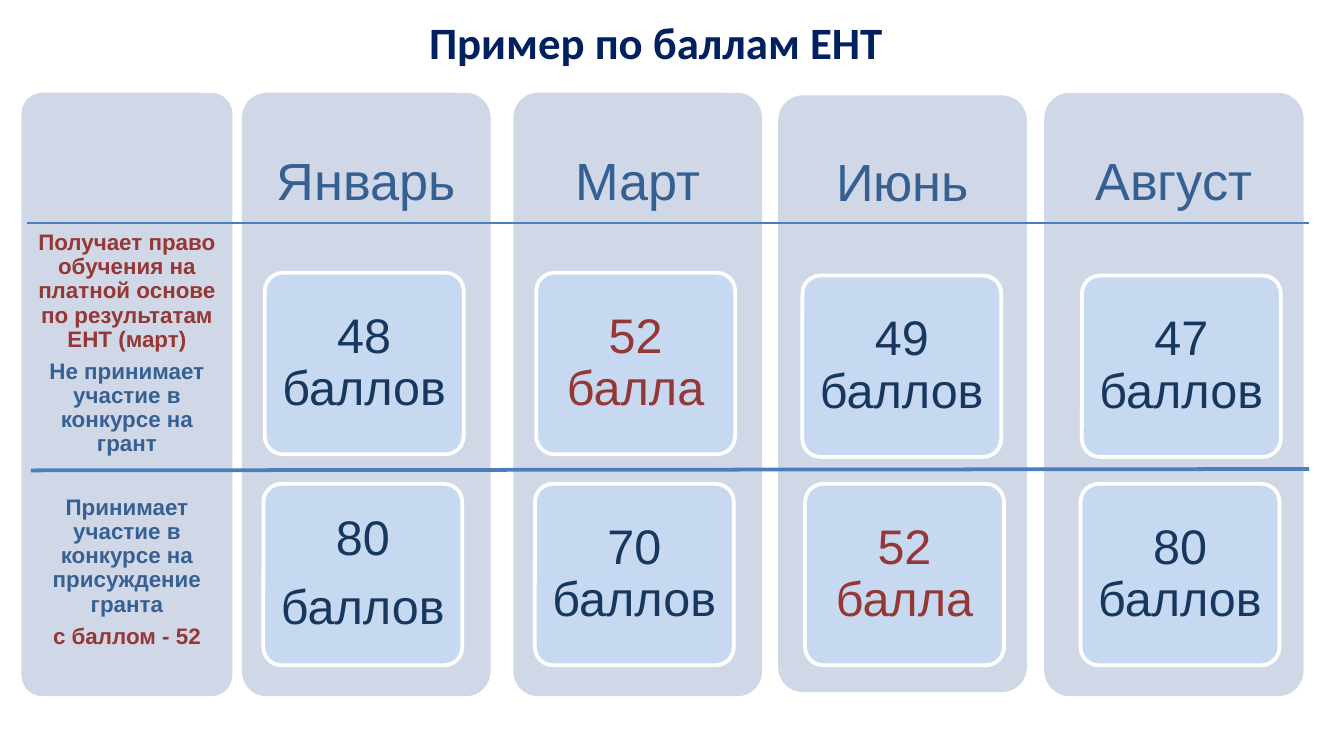
from dataclasses import dataclass

from lxml import etree
from pptx import Presentation
from pptx import util as u
from pptx.dml.color import RGBColor
from pptx.enum import shapes, text
from pptx.oxml.ns import qn

COLORS = {
    "panel": "D0D8E8",
    "card": "C6D9F1",
    "border": "FFFFFF",
    "rule": "4B7EBC",
    "title": "002060",
    "heading": "376092",
    "score": "17375E",
    "accent": "953735",
}
CARD_WIDTH, CARD_HEIGHT = 1.48, 1.35
HEADING_SHARE = 0.3
LOWER_ROW_TOP = 3.6


@dataclass
class Box:
    left: float
    top: float
    width: float
    height: float

    def lengths(self):
        return [u.Inches(n) for n in (self.left, self.top, self.width, self.height)]


@dataclass
class Card:
    left: float
    top: float
    lines: list[str]
    color: str = "score"


@dataclass
class Month:
    name: str
    panel: Box
    cards: list[Card]


MONTHS = [
    Month("Январь", Box(1.8, 0.69, 1.85, 4.49), [
        Card(1.97, 2.03, ["48 баллов"]),
        Card(1.96, LOWER_ROW_TOP, ["80", "баллов"]),
    ]),
    Month("Март", Box(3.82, 0.69, 1.85, 4.49), [
        Card(3.99, 2.03, ["52 балла"], "accent"),
        Card(3.98, LOWER_ROW_TOP, ["70 баллов"]),
    ]),
    Month("Июнь", Box(5.79, 0.71, 1.85, 4.44), [
        Card(5.97, 2.05, ["49 баллов"]),
        Card(5.99, LOWER_ROW_TOP, ["52 балла"], "accent"),
    ]),
    Month("Август", Box(7.77, 0.69, 1.93, 4.49), [
        Card(8.05, 2.05, ["47 баллов"]),
        Card(8.04, LOWER_ROW_TOP, ["80 баллов"]),
    ]),
]
CRITERIA_PANEL = Box(0.16, 0.69, 1.57, 4.49)
CRITERIA = [
    (Box(0.16, 1.72, 1.57, 1.7), [
        ("Получает право обучения на платной основе по результатам ЕНТ (март)", "accent"),
        ("Не принимает участие в конкурсе на грант", "heading"),
    ]),
    (Box(0.16, 3.69, 1.57, 1.25), [
        ("Принимает участие в конкурсе на присуждение гранта", "heading"),
        ("с баллом - 52", "accent"),
    ]),
]


def rgb(name: str) -> RGBColor:
    return RGBColor.from_string(COLORS[name])


def write(shape, lines: list[tuple[str, str]], *, size: float, font: str = "Arial",
          bold: bool = False, spacing: float = 0.9, inset_x: float = 0.05,
          inset_y: float = 0.05, anchor=text.MSO_ANCHOR.MIDDLE) -> None:
    """Fill a shape with centred paragraphs given as (wording, colour name)."""
    frame = shape.text_frame
    frame.word_wrap = True
    frame.vertical_anchor = anchor
    frame.margin_left = frame.margin_right = u.Inches(inset_x)
    frame.margin_top = frame.margin_bottom = u.Inches(inset_y)
    for index, (wording, color) in enumerate(lines):
        paragraph = frame.add_paragraph() if index else frame.paragraphs[0]
        paragraph.alignment = text.PP_ALIGN.CENTER
        paragraph.line_spacing = spacing
        if index < len(lines) - 1:
            paragraph.space_after = u.Pt(0.35 * size)
        run = paragraph.add_run()
        run.text = wording
        run.font.size = u.Pt(size)
        run.font.name = font
        run.font.bold = bold
        run.font.color.rgb = rgb(color)


def add_text(slide, box: Box, lines: list[tuple[str, str]], **style) -> None:
    write(slide.shapes.add_textbox(*box.lengths()), lines, **style)


def add_rounded(slide, box: Box, fill: str, border: str | None = None):
    shape = slide.shapes.add_shape(shapes.MSO_SHAPE.ROUNDED_RECTANGLE, *box.lengths())
    shape.adjustments[0] = 0.1
    shape.shadow.inherit = False
    shape.fill.solid()
    shape.fill.fore_color.rgb = rgb(fill)
    if border:
        shape.line.color.rgb = rgb(border)
        shape.line.width = u.Pt(2)
    else:
        shape.line.fill.background()
    return shape


def add_month(slide, month: Month) -> None:
    panel = month.panel
    add_rounded(slide, panel, "panel")
    heading = Box(panel.left, panel.top, panel.width, panel.height * HEADING_SHARE)
    add_text(slide, heading, [(month.name, "heading")], size=28,
             inset_x=0.12, inset_y=0.12)
    for card in month.cards:
        box = Box(card.left, card.top, CARD_WIDTH, CARD_HEIGHT)
        shape = add_rounded(slide, box, "card", "border")
        write(shape, [(line, card.color) for line in card.lines], size=26, inset_x=0.07)


def add_rule(slide, start: tuple[float, float], end: tuple[float, float],
             width: float) -> None:
    points = [u.Inches(n) for n in (*start, *end)]
    rule = slide.shapes.add_connector(shapes.MSO_CONNECTOR.STRAIGHT, *points)
    rule.line.color.rgb = rgb("rule")
    rule.line.width = u.Pt(width)
    etree.SubElement(rule._element.spPr, qn("a:effectLst"))


def main() -> None:
    presentation = Presentation()
    presentation.slide_width = u.Inches(10)
    presentation.slide_height = u.Inches(10 * 9 / 16)
    slide = presentation.slides.add_slide(presentation.slide_layouts[6])

    for month in MONTHS:
        add_month(slide, month)
    add_rounded(slide, CRITERIA_PANEL, "panel")
    for box, lines in CRITERIA:
        add_text(slide, box, lines, size=12, bold=True, inset_y=0,
                 anchor=text.MSO_ANCHOR.TOP)
    add_rule(slide, (0.23, 3.5), (9.74, 3.49), 2)
    add_text(slide, Box(0.38, 0.14, 9, 0.34), [("Пример по баллам ЕНТ", "title")],
             size=24, font="Calibri", bold=True, spacing=1.0)
    add_rule(slide, (0.2, 1.66), (9.74, 1.66), 0.75)

    presentation.save("out.pptx")


if __name__ == "__main__":
    main()
